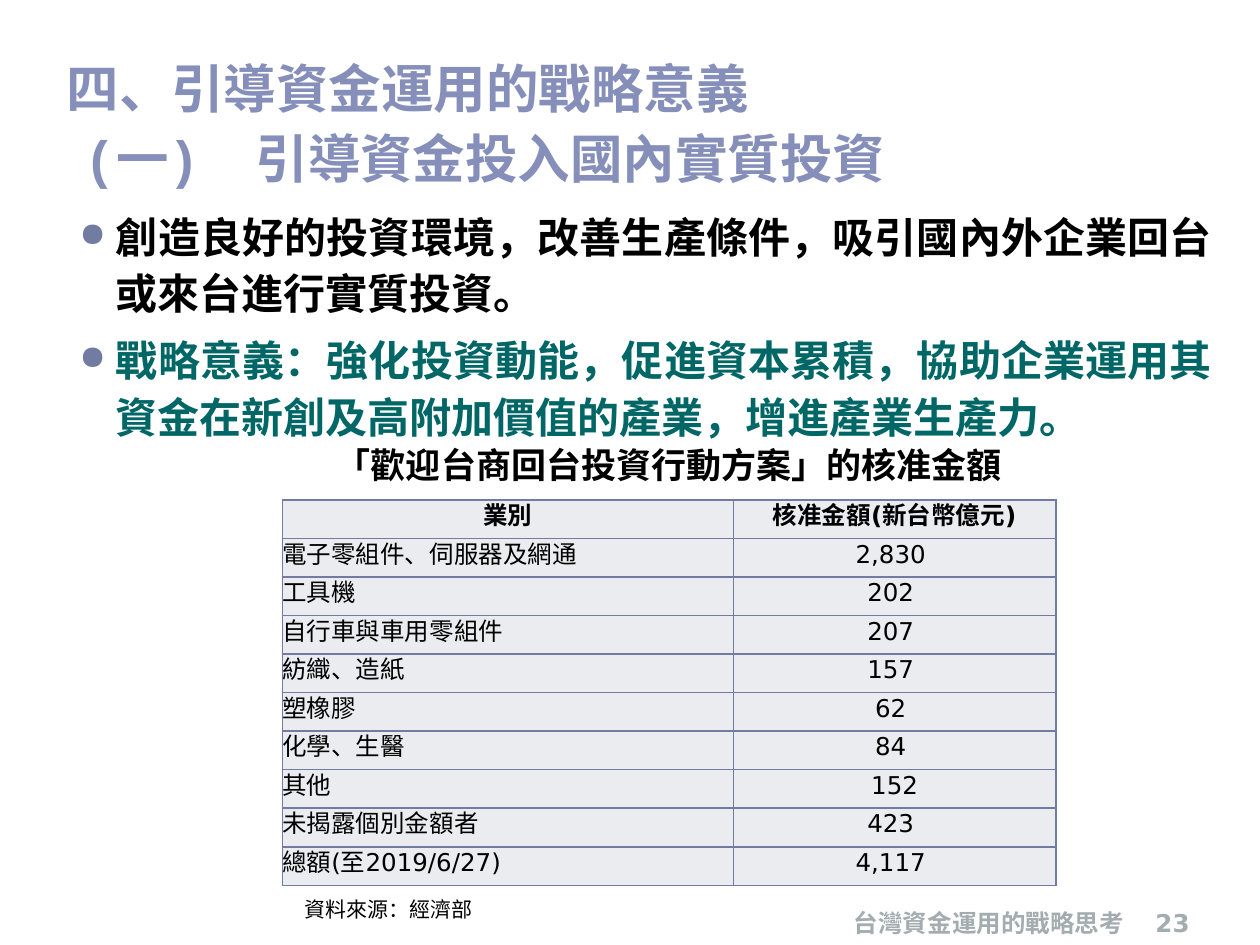
from pptx import Presentation, util as u
from pptx.dml.color import RGBColor
from pptx.enum import text as t
from pptx.oxml import parse_xml
from pptx.oxml.ns import nsdecls
from dataclasses import dataclass


@dataclass(frozen=True)
class Theme:
    ink: str = "000000"
    title: str = "858FBA"
    accent: str = "006666"
    line: str = "727CA3"
    cell: str = "EBECF0"
    foot: str = "A3ACAF"
    sans: str = "DejaVu Sans"
    body: str = "Arial"
    mono: str = "Courier New"
    cjk: str = "Noto Sans CJK SC"
    head: int = 30
    text: int = 24
    sub: int = 20
    small: int = 14
    note: int = 12


T = Theme()
WIDE, HIGH = 10, 7.5
TITLE = [
    [("四、引導資金運用的戰略意義", T.sans)],
    [(" ", T.sans), ("(一)\t", T.mono), ("引導資金投入國內實質投資", T.sans)],
]
POINTS = [
    ("創造良好的投資環境，改善生產條件，吸引國內外企業回台或來台進行實質投資。", T.ink),
    ("戰略意義：強化投資動能，促進資本累積，協助企業運用其資金在新創及高附加價值的產業，增進產業生產力。", T.accent),
]
ROWS = [
    ("業別", "核准金額(新台幣億元)"),
    ("電子零組件、伺服器及網通", "2,830 "),
    ("工具機", "202 "),
    ("自行車與車用零組件", "207 "),
    ("紡織、造紙", "157 "),
    ("塑橡膠", "62 "),
    ("化學、生醫", "84 "),
    ("其他", "152"),
    ("未揭露個別金額者", "423 "),
    ("總額(至2019/6/27)", "4,117 "),
]
COLS = (3.58, 2.56)
GRID = (0.224 * WIDE, 0.529 * HIGH, sum(COLS), 3.06)
LEFT, MID, RIGHT = t.PP_ALIGN.LEFT, t.PP_ALIGN.CENTER, t.PP_ALIGN.RIGHT
LABELS = [
    ("台灣資金運用的戰略思考", (6.1, 7.09, 3.5, 0.4), MID, T.small, T.foot, T.sans, True),
    ("23", (8.94, 7.09, 0.6, 0.4), RIGHT, T.small, T.foot, T.sans, True),
    ("「歡迎台商回台投資行動方案」的核准金額", (GRID[0], 3.47, GRID[2], 0.44), MID, T.sub, T.ink, T.sans, True),
    ("資料來源：經濟部", (2.32, 7.07, 2, 0.33), LEFT, T.note, T.ink, T.cjk, False),
]


def add_run(para, words, size, color, face=T.sans, bold=True):
    run = para.add_run()
    run.text = words
    font = run.font
    font.size, font.bold, font.name = u.Pt(size), bold, face
    font.color.rgb = RGBColor.from_string(color)
    east = T.cjk if face == T.cjk else T.sans
    font._element.find("{*}latin").addnext(
        parse_xml(f'<a:ea {nsdecls("a")} typeface="{east}"/>'))


def add_box(slide, place, low=False):
    frame = slide.shapes.add_textbox(*map(u.Inches, place)).text_frame
    frame.word_wrap = True
    frame.vertical_anchor = t.MSO_ANCHOR.BOTTOM if low else t.MSO_ANCHOR.TOP
    return frame


def add_title(slide):
    para = add_box(slide, (0.43, 0.13, 9.37, 1.42), True).paragraphs[0]
    para.line_spacing = 1.12
    for i, line in enumerate(TITLE):
        if i:
            para.add_line_break()
        for words, face in line:
            add_run(para, words, T.head, T.title, face)


def add_points(slide):
    frame = add_box(slide, (0.43, 1.53, 9.29, 5.67))
    frame.margin_left, frame.margin_top = u.Inches(0.2), u.Inches(0.1)
    dent = u.Inches(0.29)
    for i, (words, color) in enumerate(POINTS):
        para = frame.add_paragraph() if i else frame.paragraphs[0]
        para.alignment = t.PP_ALIGN.JUSTIFY
        para.line_spacing, para.space_after = 1.12, u.Pt(6)
        props = para._p.get_or_add_pPr()
        props.set("marL", str(dent))
        props.set("indent", str(-dent))
        for mark in (f'buClr {nsdecls("a")}><a:srgbClr val="{T.line}"/></a:buClr>',
                     f'buSzPct {nsdecls("a")} val="80000"/>',
                     f'buChar {nsdecls("a")} char="●"/>'):
            props.append(parse_xml("<a:" + mark))
        add_run(para, words, T.text, color, T.body)


def add_edges(cell):
    props = cell._tc.get_or_add_tcPr()
    for i, side in enumerate(("lnL", "lnR", "lnT", "lnB")):
        props.insert(i, parse_xml(
            f'<a:{side} {nsdecls("a")} w="{u.Pt(1)}"><a:solidFill>'
            f'<a:srgbClr val="{T.line}"/></a:solidFill></a:{side}>'))


def add_grid(slide):
    table = slide.shapes.add_table(
        len(ROWS), len(COLS), *map(u.Inches, GRID)).table
    for col, width in zip(table.columns, COLS):
        col.width = u.Inches(width)
    for r, row in enumerate(ROWS):
        for c, words in enumerate(row):
            cell = table.cell(r, c)
            cell.margin_left = cell.margin_right = 0
            cell.margin_top = cell.margin_bottom = 0
            cell.vertical_anchor = t.MSO_ANCHOR.MIDDLE
            cell.fill.solid()
            cell.fill.fore_color.rgb = RGBColor.from_string(T.cell)
            add_edges(cell)
            para = cell.text_frame.paragraphs[0]
            para.alignment = LEFT if r and not c else MID
            para.line_spacing = u.Pt(13)
            add_run(para, words, T.small, T.ink, bold=not r)


def main():
    deck = Presentation()
    deck.slide_width, deck.slide_height = u.Inches(WIDE), u.Inches(HIGH)
    slide = deck.slides.add_slide(deck.slide_layouts[6])
    add_points(slide)
    for words, place, align, size, color, face, bold in LABELS:
        para = add_box(slide, place, color == T.foot).paragraphs[0]
        para.alignment = align
        add_run(para, words, size, color, face, bold)
    add_grid(slide)
    add_title(slide)
    deck.save("out.pptx")


if __name__ == "__main__":
    main()
